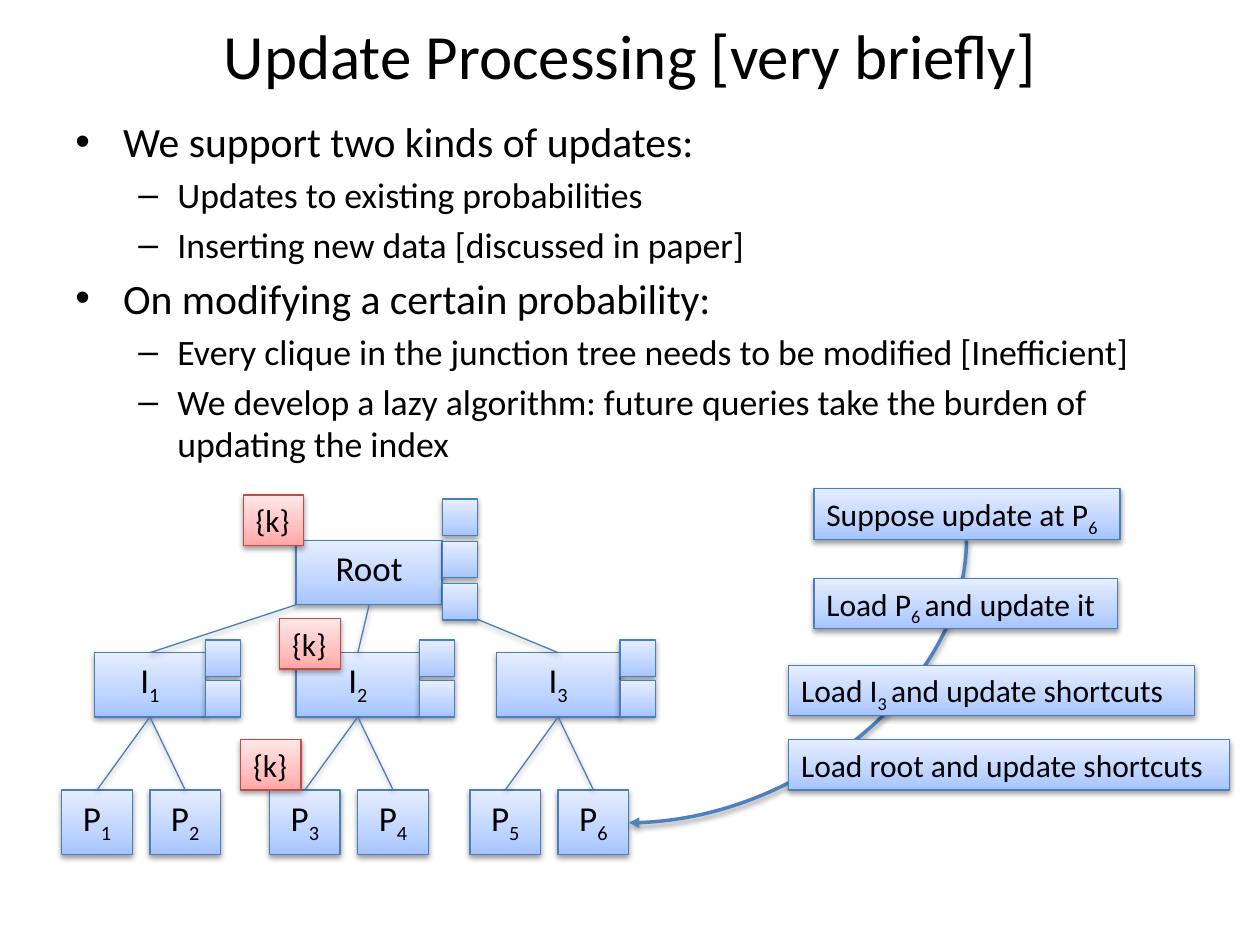
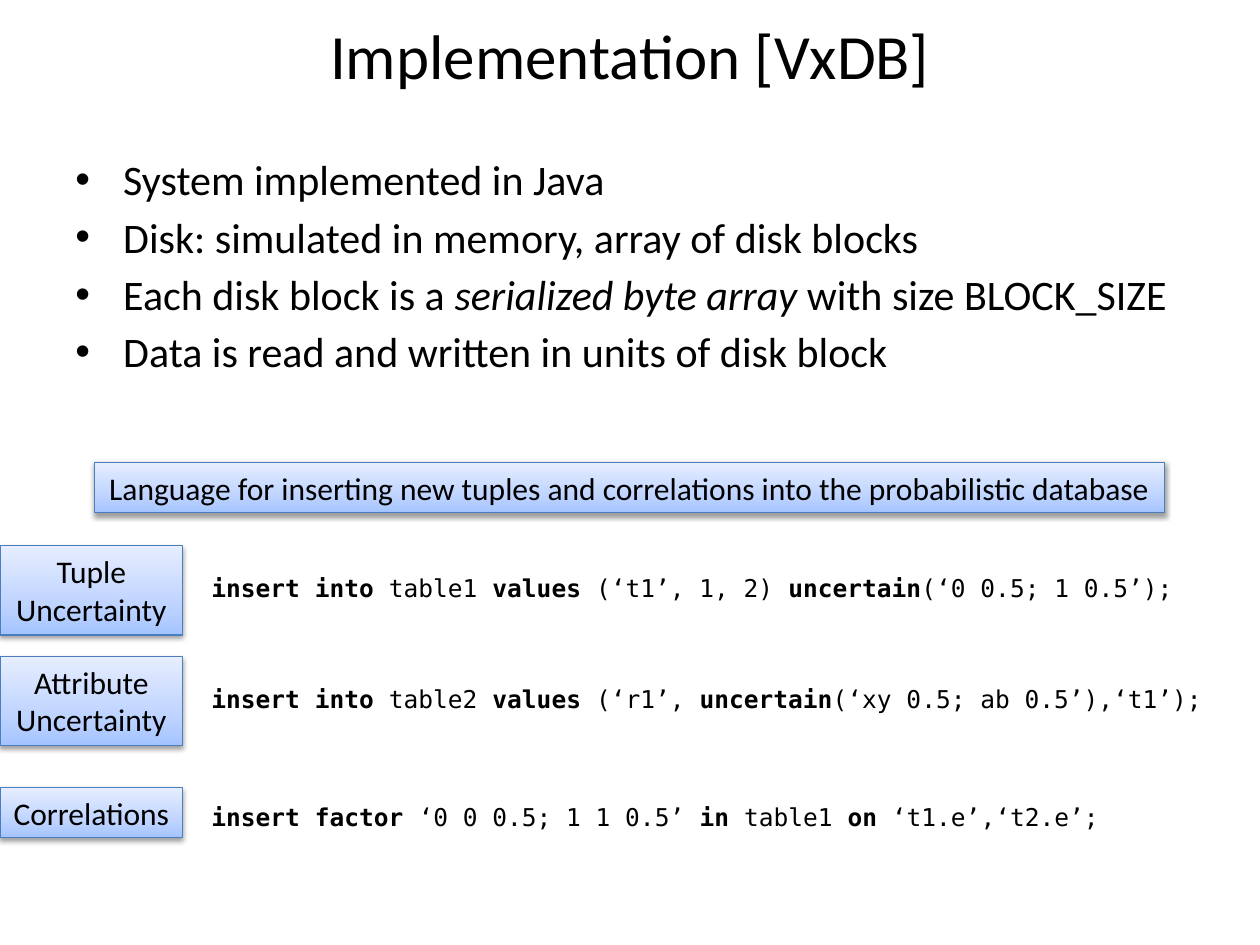
from lxml import etree
from pptx import Presentation
from pptx.dml.color import RGBColor
from pptx.enum.shapes import MSO_CONNECTOR, MSO_SHAPE
from pptx.enum.text import MSO_ANCHOR, PP_ALIGN
from pptx.oxml import parse_xml
from pptx.oxml.ns import nsdecls, qn
from pptx.util import Inches, Pt

BLACK = RGBColor(0x00, 0x00, 0x00)
EDGE_BLUE = RGBColor(0x4B, 0x7E, 0xBC)
CURVE_BLUE = RGBColor(0x4F, 0x81, 0xBD)
EDGE_RED = RGBColor(0xBF, 0x4C, 0x48)
BLUE_STOPS = (RGBColor(0xA4, 0xC4, 0xFF), RGBColor(0xBF, 0xD4, 0xFF), RGBColor(0xE6, 0xEE, 0xFF))
RED_STOPS = (RGBColor(0xFF, 0xA6, 0xA5), RGBColor(0xFF, 0xC0, 0xBF), RGBColor(0xFF, 0xE7, 0xE7))
BLUE = (BLUE_STOPS, EDGE_BLUE)
RED = (RED_STOPS, EDGE_RED)

TITLE = {"name": "Calibri", "size": Pt(36)}
NODE = {"name": "Calibri", "size": Pt(20)}
LABEL = {"name": "Calibri", "size": Pt(18)}
CODE = {"name": "DejaVu Sans Mono", "size": Pt(14)}
BOLD = {"bold": True}
ITALIC = {"italic": True}
SUBSCRIPT = {"baseline": "-25000"}

BULLETS = [("•", 0.38, 0.38), ("–", 0.81, 0.31)]
NODE_H = 0.51
ROOT_TOP, INNER_TOP, LEAF_TOP = 4.29, 5.18, 6.27
LEAF_W, LEAF_SHIFT = 0.56, 0.7
CELL_W, CELL_H = 0.28, 0.29


def add_runs(p, text, font, mark):
    """Fill a paragraph; every second piece between bars gets the mark."""
    for i, piece in enumerate(text.split("|")):
        if not piece:
            continue
        r = p.add_run()
        r.text = piece
        r.font.color.rgb = BLACK
        values = {**font, **mark} if i % 2 else font
        for name, value in values.items():
            if name == "baseline":
                r._r.get_or_add_rPr().set(name, value)
            else:
                setattr(r.font, name, value)


def add_text(s, text, at, font, mark=BOLD, **paragraph):
    """Add a wrapping one-paragraph text box."""
    tf = s.shapes.add_textbox(*map(Inches, at)).text_frame
    tf.word_wrap = True
    p = tf.paragraphs[0]
    for name, value in paragraph.items():
        setattr(p, name, value)
    add_runs(p, text, font, mark)
    return tf


def add_slide(prs, title):
    """Add a blank slide with the shared title."""
    s = prs.slides.add_slide(prs.slide_layouts[6])
    tf = add_text(s, title, (0.5, 0, 9, 0.87), TITLE, alignment=PP_ALIGN.CENTER)
    tf.vertical_anchor = MSO_ANCHOR.MIDDLE
    return s


def add_bullets(s, at, lines, sizes):
    """Add a list of (level, text) lines with hanging bullets."""
    tf = s.shapes.add_textbox(*map(Inches, at)).text_frame
    tf.word_wrap = True
    for i, (level, text) in enumerate(lines):
        p = tf.paragraphs[0] if i == 0 else tf.add_paragraph()
        p.level = level
        p.space_before = Pt(4)
        char, margin, hang = BULLETS[level]
        pPr = p._p.get_or_add_pPr()
        pPr.set("marL", str(Inches(margin)))
        pPr.set("indent", str(-Inches(hang)))
        etree.SubElement(pPr, qn("a:buFont"), typeface="Arial")
        etree.SubElement(pPr, qn("a:buChar"), char=char)
        add_runs(p, text, {"name": "Calibri", "size": Pt(sizes[level])}, ITALIC)


def add_shadow(spPr):
    """Append the soft drop shadow that boxes and lines share."""
    spPr.append(parse_xml(
        f'<a:effectLst {nsdecls("a")}><a:outerShdw blurRad="40000" dist="20000" dir="5400000" '
        'rotWithShape="0"><a:srgbClr val="000000"><a:alpha val="38000"/></a:srgbClr>'
        '</a:outerShdw></a:effectLst>'))


def add_box(s, at, text="", font=NODE, style=BLUE, align=PP_ALIGN.CENTER, wrap=True):
    """Add a gradient rectangle with a shadow and one paragraph per text line."""
    shape = s.shapes.add_shape(MSO_SHAPE.RECTANGLE, *map(Inches, at))
    stops, edge = style
    spPr = shape._element.spPr
    gradient = "".join(f'<a:gs pos="{pos}"><a:srgbClr val="{color}"/></a:gs>'
                       for pos, color in zip((0, 35000, 100000), stops))
    spPr.append(parse_xml(
        f'<a:gradFill {nsdecls("a")} rotWithShape="1"><a:gsLst>{gradient}</a:gsLst>'
        '<a:lin ang="16200000" scaled="0"/></a:gradFill>'))
    shape.line.color.rgb = edge
    shape.line.width = Pt(0.75)
    add_shadow(spPr)
    tf = shape.text_frame
    tf.word_wrap = wrap
    tf.vertical_anchor = MSO_ANCHOR.TOP
    for i, line in enumerate(text.split("\n")):
        p = tf.paragraphs[0] if i == 0 else tf.add_paragraph()
        p.alignment = align
        add_runs(p, line, font, SUBSCRIPT)


def add_edge(s, start, end):
    """Add a thin straight tree edge."""
    line = s.shapes.add_connector(MSO_CONNECTOR.STRAIGHT, *map(Inches, start + end))
    line.line.color.rgb = EDGE_BLUE
    line.line.width = Pt(0.75)
    add_shadow(line._element.spPr)


def add_curve(s, start, end):
    """Add a quarter-turn arrow that leaves downwards and arrives leftwards."""
    (x1, y1), (x2, y2) = start, end
    mid_x, mid_y = (x1 + x2) / 2, (y1 + y2) / 2
    half_w, half_h = (y2 - y1) / 2, (x1 - x2) / 2
    corners = (mid_x - half_w, mid_y - half_h, mid_x + half_w, mid_y + half_h)
    curve = s.shapes.add_connector(MSO_CONNECTOR.CURVE, *map(Inches, corners))
    curve.line.color.rgb = CURVE_BLUE
    curve.line.width = Pt(2)
    spPr = curve._element.spPr
    spPr.find(qn("a:xfrm")).set("rot", "5400000")
    spPr.find(qn("a:prstGeom")).set("prst", "curvedConnector2")
    etree.SubElement(spPr.find(qn("a:ln")), qn("a:tailEnd"), type="triangle")
    add_shadow(spPr)


def add_cells(s, left, top, count, step):
    """Stack small shortcut cells downwards."""
    for i in range(count):
        add_box(s, (left, top + i * step, CELL_W, CELL_H))


def add_tree(s):
    """Draw the index tree with its shortcut cells and key tags."""
    inner = [(0.75, 0.88, 1.19), (2.35, 0.98, 2.84), (3.94, 0.98, 4.43)]
    add_box(s, (2.35, ROOT_TOP, 1.16, NODE_H), "Root")
    for i, (left, width, centre) in enumerate(inner):
        add_box(s, (left, INNER_TOP, width, NODE_H), f"I|{i + 1}")
        add_edge(s, (2.35 + i * 0.58, ROOT_TOP + NODE_H), (centre, INNER_TOP))
        for j, leaf_left in enumerate((centre - LEAF_SHIFT, centre)):
            add_box(s, (leaf_left, LEAF_TOP, LEAF_W, NODE_H), f"P|{2 * i + j + 1}")
            add_edge(s, (centre, INNER_TOP + NODE_H), (leaf_left + LEAF_W / 2, LEAF_TOP))
        add_cells(s, left + width, 5.08, 2, 0.32)
    add_cells(s, 3.51, 3.96, 3, 0.335)
    for left, top in [(1.93, 3.93), (2.22, 4.91), (1.91, 5.87)]:
        add_box(s, (left, top, 0.48, 0.4), "{k}", LABEL, RED, PP_ALIGN.LEFT, False)


def add_steps(s):
    """Draw the update steps along the curved arrow."""
    steps = [
        (6.46, 3.88, 2.43, "Suppose update at P|6"),
        (6.46, 4.59, 2.41, "Load P|6 |and update it"),
        (6.26, 5.28, 3.22, "Load I|3 |and update shortcuts"),
        (6.26, 5.87, 3.5, "Load root and update shortcuts"),
    ]
    add_curve(s, (7.67, 4.29), (4.99, 6.53))
    for left, top, width, text in steps:
        add_box(s, (left, top, width, 0.4), text, LABEL, align=PP_ALIGN.LEFT)


def build_update_slide(prs):
    """Build the slide on update processing."""
    s = add_slide(prs, "Update Processing [very briefly]")
    add_bullets(s, (0.5, 0.87, 8.97, 2.72), [
        (0, "We support two kinds of updates:"),
        (1, "Updates to existing probabilities"),
        (1, "Inserting new data [discussed in paper]"),
        (0, "On modifying a certain probability:"),
        (1, "Every clique in the junction tree needs to be modified [Inefficient]"),
        (1, "We develop a lazy algorithm: future queries take the burden of updating the index"),
    ], (23.8, 20.4))
    add_tree(s)
    add_steps(s)


def build_implementation_slide(prs):
    """Build the slide on the implementation and its language."""
    s = add_slide(prs, "Implementation [VxDB]")
    add_bullets(s, (0.5, 1.17, 9, 2.08), [
        (0, "System implemented in Java"),
        (0, "Disk: simulated in memory, array of disk blocks"),
        (0, "Each disk block is a |serialized byte array| with size BLOCK_SIZE"),
        (0, "Data is read and written in units of disk block"),
    ], (24,))
    add_box(s, (0.75, 3.67, 8.49, 0.4),
            "Language for inserting new tuples and correlations into the probabilistic database",
            LABEL, wrap=False)
    statements = [
        (4.33, 0.71, "Tuple\nUncertainty", 4.5,
         "|insert into |table1 |values |(‘t1’, 1, 2) |uncertain|(‘0 0.5; 1 0.5’);"),
        (5.21, 0.71, "Attribute\nUncertainty", 5.38,
         "|insert into |table2 |values |(‘r1’, |uncertain|(‘xy 0.5; ab 0.5’),‘t1’);"),
        (6.25, 0.4, "Correlations", 6.32,
         "|insert factor |‘0 0 0.5; 1 1 0.5’ |in |table1 |on |‘t1.e’,‘t2.e’;"),
    ]
    for top, height, label, code_top, code in statements:
        add_box(s, (0, top, 1.45, height), label, LABEL, wrap=False)
        add_text(s, code, (1.58, code_top, 8.42, 0.34), CODE)


def main():
    """Build and save the presentation."""
    prs = Presentation()
    prs.slide_width, prs.slide_height = Inches(10), Inches(7.5)
    build_update_slide(prs)
    build_implementation_slide(prs)
    prs.save("out.pptx")


if __name__ == "__main__":
    main()
